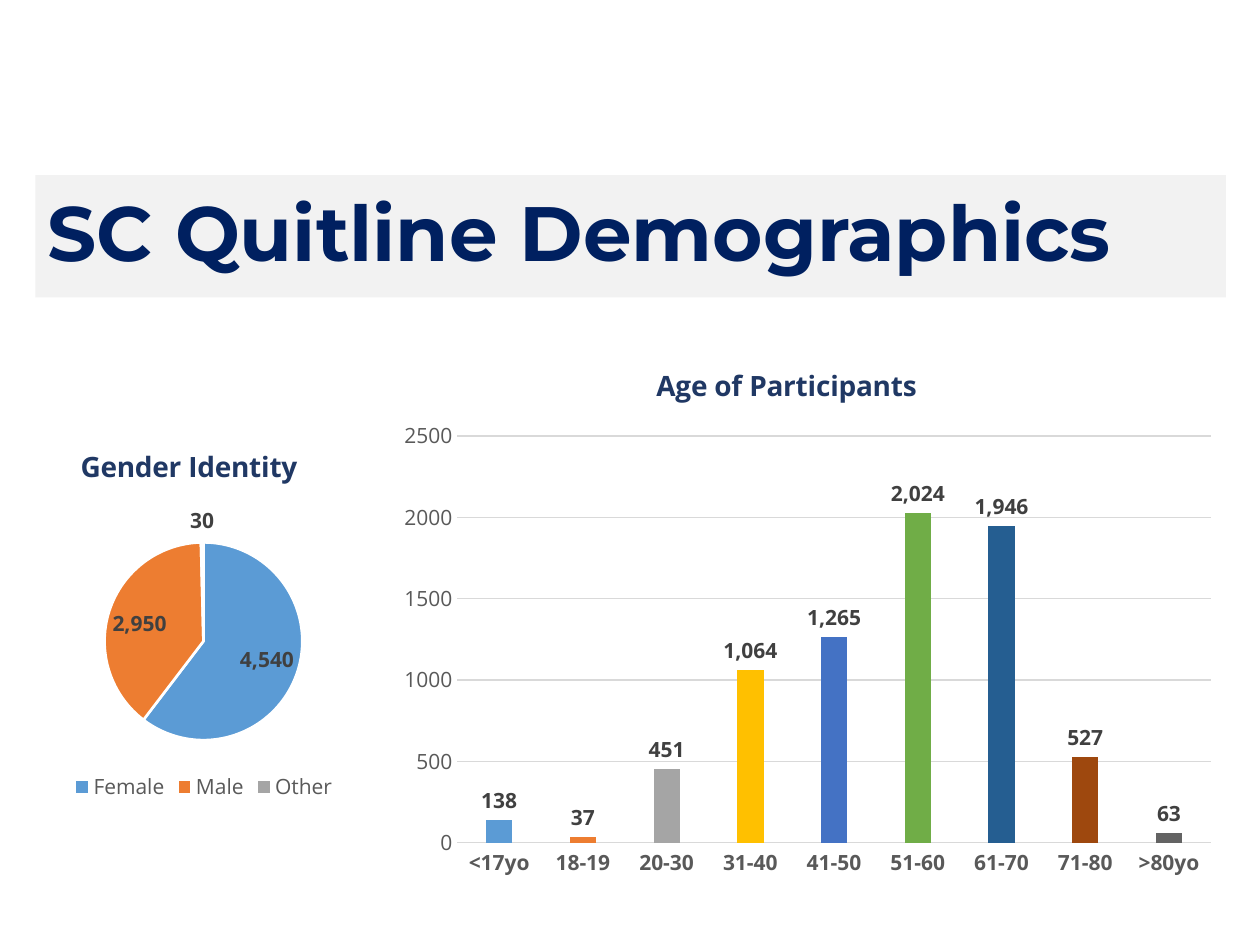
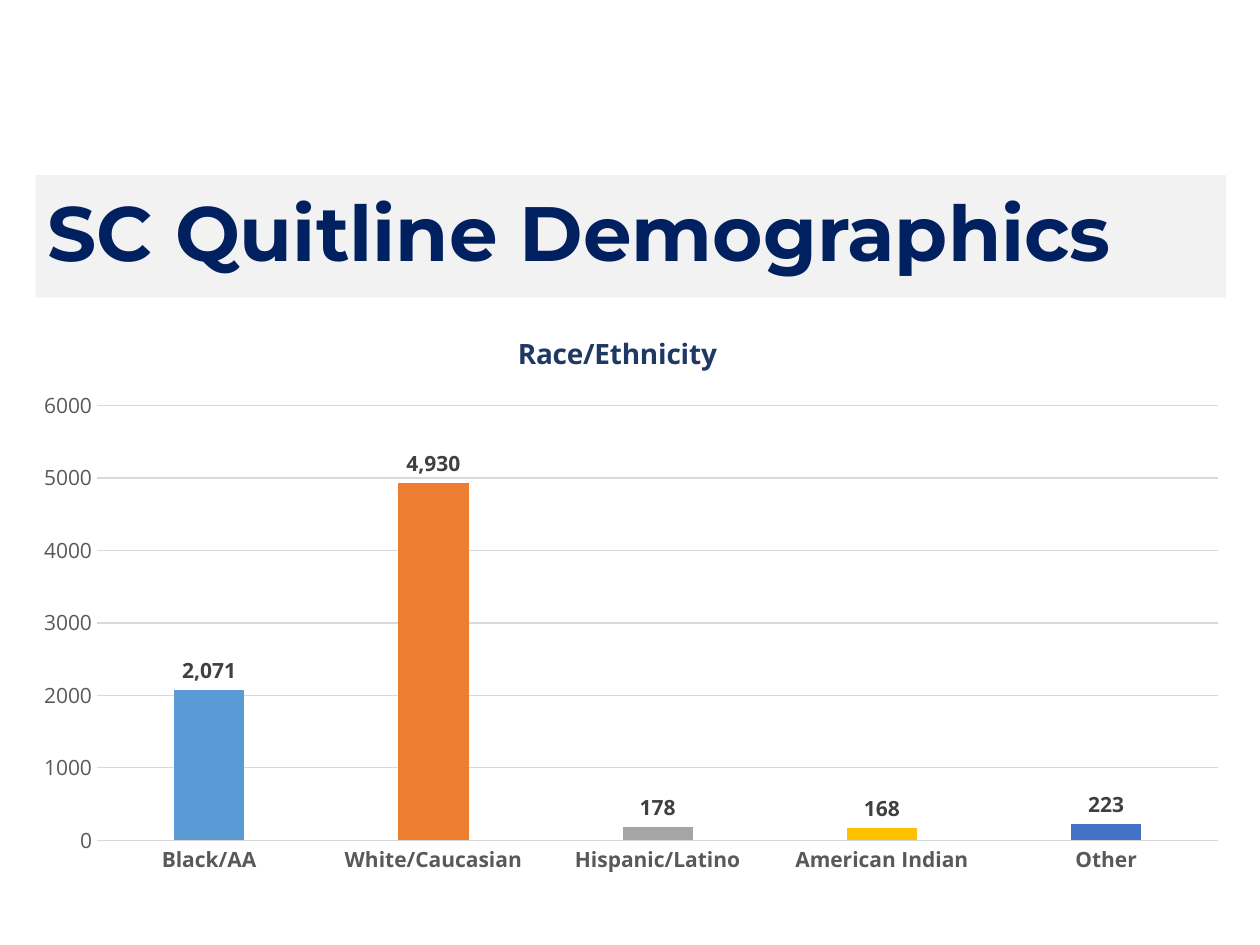
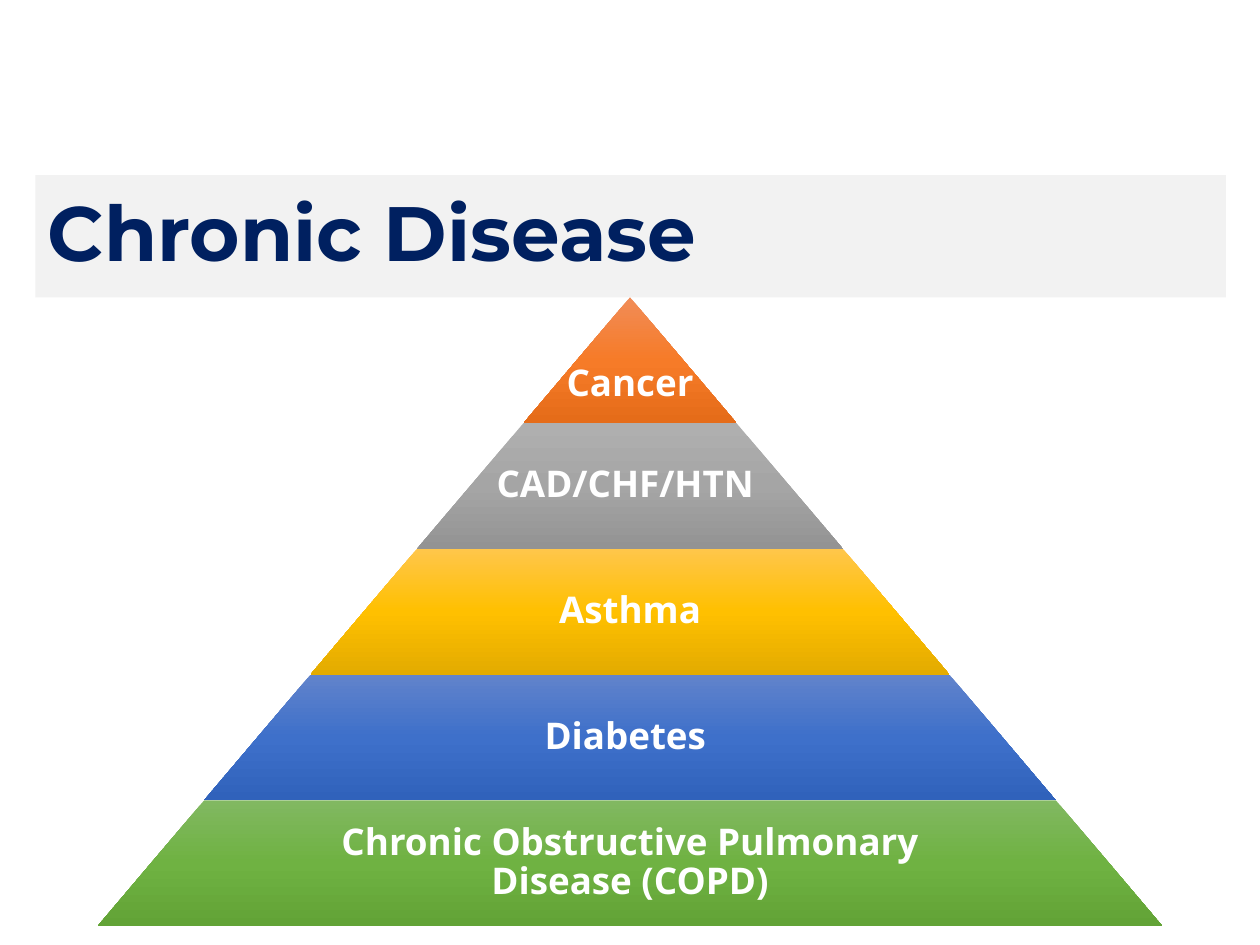
from copy import deepcopy

from pptx import Presentation
from pptx.chart.data import CategoryChartData
from pptx.dml.color import RGBColor
from pptx.enum.chart import (XL_CHART_TYPE as CT, XL_LABEL_POSITION as LP,
                             XL_LEGEND_POSITION as LEGEND, XL_TICK_MARK as TICK)
from pptx.enum.shapes import MSO_SHAPE as SHAPE
from pptx.enum.text import MSO_ANCHOR as ANCHOR, PP_ALIGN as ALIGN
from pptx.oxml import parse_xml
from pptx.oxml.ns import nsdecls, qn
from pptx.util import Inches, Pt

# Shared style
HEAD_FONT, BODY_FONT = "Montserrat", "Open Sans"
NAVY, BAND, WHITE = "002060", "F2F2F2", "FFFFFF"
CHART_TITLE, LABEL, AXIS, GRID = "203864", "404040", "595959", "D9D9D9"
PALETTE = ["5B9BD5", "ED7D31", "A5A5A5", "FFC000", "4472C4",
           "70AD47", "255E91", "9E480E", "636363"]


def rgb(hex_string):
    return RGBColor.from_string(hex_string)


def put_text(tf, text, size, color, font=BODY_FONT, align=ALIGN.LEFT, spacing=None):
    p = tf.paragraphs[0]
    p.alignment = align
    if spacing:
        p.line_spacing = spacing
    r = p.add_run()
    r.text = text
    f = r.font
    f.name, f.size, f.bold, f.color.rgb = font, Pt(size), True, rgb(color)


prs = Presentation()
prs.slide_width, prs.slide_height = Inches(10), Inches(7.5)

# Slides with their title bands
slides = []
for title in ["SC Quitline Demographics", "SC Quitline Demographics", "Chronic Disease"]:
    s = prs.slides.add_slide(prs.slide_layouts[6])
    sp = s.shapes.add_shape(SHAPE.RECTANGLE, Inches(0.28), Inches(1.39),
                            Inches(9.45), Inches(0.97))
    sp.shadow.inherit = False
    sp.fill.solid()
    sp.fill.fore_color.rgb = rgb(BAND)
    sp.line.fill.background()
    sp.text_frame.word_wrap = True
    sp.text_frame.vertical_anchor = ANCHOR.MIDDLE
    put_text(sp.text_frame, title, 44, NAVY, font=HEAD_FONT, spacing=0.9)
    slides.append(s)

# Charts: slide, title, title left, frame, plot area, axis (top, step), data
charts = [
    (slides[0], "Gender Identity", 0.6, (-0.88, 3.24, 5, 3.16),
     (0.83, 4.3, 1.57, 1.58), None,
     {"Female": 4540, "Male": 2950, "Other": 30}),
    (slides[0], "Age of Participants", 5.17, (3.07, 2.6, 6.67, 4.44),
     (3.63, 3.46, 5.98, 3.23), (2500, 500),
     {"<17yo": 138, "18-19": 37, "20-30": 451, "31-40": 1064, "41-50": 1265,
      "51-60": 2024, "61-70": 1946, "71-80": 527, ">80yo": 63}),
    (slides[1], "Race/Ethnicity", 4.07, (0.15, 2.35, 9.72, 4.68),
     (0.77, 3.22, 8.9, 3.45), (6000, 1000),
     {"Black/AA": 2071, "White/Caucasian": 4930, "Hispanic/Latino": 178,
      "American Indian": 168, "Other": 223}),
]
for s, title, title_left, frame, plot_box, scale, values in charts:
    data = CategoryChartData(number_format="#,##0")
    data.categories = list(values)
    data.add_series("Series 1", list(values.values()))
    kind = CT.COLUMN_CLUSTERED if scale else CT.PIE
    chart = s.shapes.add_chart(kind, *map(Inches, frame), data).chart
    chart.font.name, chart.font.size = BODY_FONT, Pt(10)
    put_text(chart.chart_title.text_frame, title, 16, CHART_TITLE, align=ALIGN.CENTER)

    # Title and plot area placed as shares of the frame
    left, top, width, height = frame
    x, y, w, h = plot_box
    title_el = chart.chart_title._element
    plot_el = chart._chartSpace.chart.plotArea
    for parent, index, target, shares in [
        (title_el, 1, "", {"x": (title_left - left) / width, "y": 0.25 / height}),
        (plot_el, 0, '<c:layoutTarget val="inner"/>',
         {"x": (x - left) / width, "y": (y - top) / height,
          "w": w / width, "h": h / height}),
    ]:
        for old in parent.findall(qn("c:layout")):
            parent.remove(old)
        modes = "".join(f'<c:{k}Mode val="edge"/>' for k in "xy")
        places = "".join(f'<c:{k} val="{v:.4f}"/>' for k, v in shares.items())
        parent.insert(index, parse_xml(
            f'<c:layout {nsdecls("c")}><c:manualLayout>{target}{modes}{places}'
            '</c:manualLayout></c:layout>'))

    # Points and value labels
    plot = chart.plots[0]
    plot.vary_by_categories = True
    for i in range(len(values)):
        fmt = plot.series[0].points[i].format
        fmt.fill.solid()
        fmt.fill.fore_color.rgb = rgb(PALETTE[i])
        if not scale:
            fmt.line.color.rgb, fmt.line.width = rgb(WHITE), Pt(1.5)
    labels = plot.series[0].data_labels
    labels.show_value = True
    labels.number_format, labels.number_format_is_linked = "#,##0", False
    labels.position = LP.OUTSIDE_END if scale else LP.BEST_FIT
    styled = [(labels.font, LABEL, True)]

    # Axes for columns, legend for the pie
    chart.has_legend = not scale
    if scale:
        plot.gap_width, plot.overlap = 219, -27
        cat, val = chart.category_axis, chart.value_axis
        for axis in (cat, val):
            axis.major_tick_mark = axis.minor_tick_mark = TICK.NONE
        cat.format.line.color.rgb, cat.format.line.width = rgb(GRID), Pt(0.75)
        val.format.line.fill.background()
        grid = val.major_gridlines.format.line
        grid.color.rgb, grid.width = rgb(GRID), Pt(0.75)
        val.minimum_scale = 0
        val.maximum_scale, val.major_unit = scale
        val.tick_labels.number_format = "General"
        val.tick_labels.number_format_is_linked = False
        styled += [(cat.tick_labels.font, AXIS, True), (val.tick_labels.font, AXIS, False)]
    else:
        chart.legend.position = LEGEND.BOTTOM
        chart.legend.include_in_layout = False
        styled.append((chart.legend.font, AXIS, False))
    for f, color, bold in styled:
        f.name, f.size, f.bold, f.color.rgb = BODY_FONT, Pt(12), bold, rgb(color)

# Pyramid: each level is one step wider than the level above
levels = [
    ("Cancer", ("F18C57", "F67B28", "E56C19")),
    ("CAD/CHF/HTN ", ("AFAFAF", "A5A5A5", "939393")),
    ("Asthma", ("FFC64B", "FFC000", "E3AB00")),
    ("Diabetes ", ("6183CB", "3E70CA", "3062BB")),
    ("Chronic Obstructive Pulmonary Disease (COPD)", ("81B861", "6FB242", "62A336")),
]
CENTER, APEX, STEP, ROW = 5, 2.36, 1.69, 0.998
shapes = slides[2].shapes
for i, (text, colors) in enumerate(levels):
    top, width = APEX + i * ROW, (i + 1) * STEP
    sp = shapes.add_shape(SHAPE.TRAPEZOID, Inches(CENTER - width / 2), Inches(top),
                          Inches(width), Inches(ROW))
    sp.adjustments[0] = STEP / 2 / ROW
    sp.shadow.inherit = False
    sp.line.fill.background()
    sp.fill.gradient()
    sp.fill.gradient_angle = 270
    stop_list = sp._element.spPr.find(qn("a:gradFill")).find(qn("a:gsLst"))
    stop_list.append(deepcopy(stop_list[0]))
    for stop, color, position in zip(sp.fill.gradient_stops, colors, (0, 0.5, 1)):
        stop.color.rgb, stop.position = rgb(color), position

    text_width = width * 0.65 if i else width
    tf = shapes.add_textbox(Inches(CENTER - text_width / 2), Inches(top),
                            Inches(text_width), Inches(ROW)).text_frame
    tf.word_wrap = True
    tf.vertical_anchor = ANCHOR.MIDDLE
    tf.margin_left = tf.margin_right = tf.margin_bottom = Inches(0.03)
    tf.margin_top = Inches(0.03 if i else 0.42)
    put_text(tf, text, 21, WHITE, align=ALIGN.CENTER, spacing=0.9)

prs.save("out.pptx")
